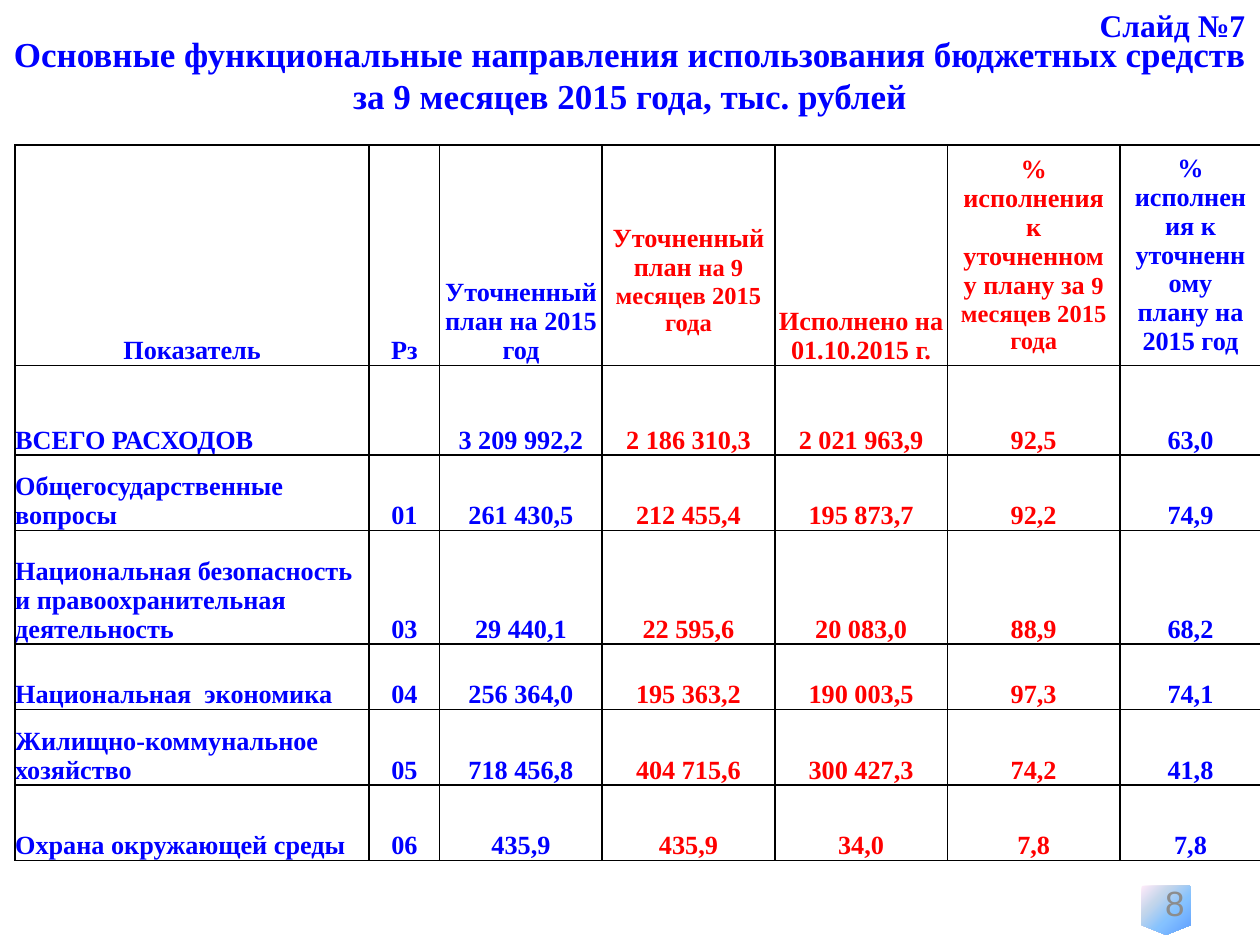
from dataclasses import dataclass

from pptx import Presentation
from pptx.dml.color import RGBColor
from pptx.enum.shapes import MSO_SHAPE
from pptx.enum.text import MSO_ANCHOR, MSO_AUTO_SIZE, PP_ALIGN
from pptx.oxml import parse_xml
from pptx.oxml.ns import nsdecls
from pptx.util import Inches, Pt

LEFT, CENTER, RIGHT = PP_ALIGN.LEFT, PP_ALIGN.CENTER, PP_ALIGN.RIGHT
TOP, MIDDLE, BOTTOM = MSO_ANCHOR.TOP, MSO_ANCHOR.MIDDLE, MSO_ANCHOR.BOTTOM
GROW, FIXED = MSO_AUTO_SIZE.SHAPE_TO_FIT_TEXT, MSO_AUTO_SIZE.NONE
PAGE_MARKER = MSO_SHAPE.FLOWCHART_OFFPAGE_CONNECTOR


@dataclass(frozen=True)
class Theme:
    """Colours, fonts and type sizes of the slide."""

    blue: str = "0000FF"
    red: str = "FF0000"
    gray: str = "8C8C8C"
    border: str = "000000"
    gradient: tuple = ((0, "5E9EFF"), (40, "85C2FF"), (70, "C4D6EB"), (100, "FFEBFA"))
    serif: str = "Times New Roman"
    sans: str = "Arial"
    title: int = 20
    label: int = 18
    body: int = 15
    small: int = 14


COLUMN_WIDTHS = (2.81, 0.56, 1.29, 1.37, 1.37, 1.37, 1.12)
ROW_HEIGHTS = (1.75, 0.71, 0.6, 0.9, 0.52, 0.6, 0.6)
RED_COLUMNS = (3, 4, 5)
PADDED_HEADERS = (5, 6)
PLAN_HEADER = 3
HEADERS = (
    ("Показатель",),
    ("Рз",),
    ("Уточненный план на 2015 год",),
    ("Уточненный план ", "на 9 месяцев 2015 года"),
    ("Исполнено на 01.10.2015 г.",),
    ("% исполнения к уточненному плану за ", "9 месяцев 2015 года"),
    ("% исполнения к уточненному плану на 2015 год",),
)
EXPENSES = (
    ("ВСЕГО РАСХОДОВ", "", "3 209 992,2", "2 186 310,3", "2 021 963,9", "92,5", "63,0"),
    ("Общегосударственные вопросы", "01", "261 430,5", "212 455,4", "195 873,7", "92,2", "74,9"),
    ("Национальная безопасность и правоохранительная деятельность",
     "03", "29 440,1", "22 595,6", "20 083,0", "88,9", "68,2"),
    ("Национальная  экономика", "04", "256 364,0", "195 363,2", "190 003,5", "97,3", "74,1"),
    ("Жилищно-коммунальное хозяйство", "05", "718 456,8", "404 715,6", "300 427,3", "74,2", "41,8"),
    ("Охрана окружающей среды", "06", "435,9", "435,9", "34,0", "7,8", "7,8"),
)


def apply_format(target, values):
    """Set every attribute named in a dict of format values."""
    for name, value in values.items():
        setattr(target, name, value)


class SlideBuilder:
    """Hold the theme and the current slide, and add elements to it."""

    def __init__(self, slide, theme):
        self.slide = slide
        self.theme = theme

    def add_runs(self, paragraph, runs, color, alignment, font=None, bold=True):
        """Fill a paragraph with (text, size) runs."""
        paragraph.alignment = alignment
        for text, size in runs:
            run = paragraph.add_run()
            run.text = text
            apply_format(run.font, {"name": font or self.theme.serif, "size": Pt(size), "bold": bold})
            run.font.color.rgb = RGBColor.from_string(color)

    def add_text(self, box, text, size, color, alignment, anchor=TOP, wrap=True,
                 auto_size=GROW, **style):
        """Add a text box with one paragraph."""
        frame = self.slide.shapes.add_textbox(*map(Inches, box)).text_frame
        apply_format(frame, {"word_wrap": wrap, "auto_size": auto_size, "vertical_anchor": anchor})
        self.add_runs(frame.paragraphs[0], [(text, size)], color, alignment, **style)

    def add_page_marker(self, box):
        """Add the page marker with its circular gradient."""
        shape = self.slide.shapes.add_shape(PAGE_MARKER, *map(Inches, box))
        shape.shadow.inherit = False
        shape.line.fill.background()
        shape.fill.background()
        stops = "".join(
            f'<a:gs pos="{position * 1000}"><a:srgbClr val="{color}"/></a:gs>'
            for position, color in self.theme.gradient
        )
        gradient = parse_xml(
            f'<a:gradFill {nsdecls("a")} rotWithShape="1"><a:gsLst>{stops}</a:gsLst>'
            '<a:path path="circle"><a:fillToRect l="100000" t="100000"/></a:path></a:gradFill>'
        )
        properties = shape.element.spPr
        properties.replace(properties.find("{*}noFill"), gradient)

    def add_borders(self, cell):
        """Draw a one-point line on each side of a cell."""
        properties = cell._tc.get_or_add_tcPr()
        for side in ("lnL", "lnR", "lnT", "lnB"):
            properties.append(parse_xml(
                f'<a:{side} {nsdecls("a")} w="{Pt(1)}"><a:solidFill>'
                f'<a:srgbClr val="{self.theme.border}"/></a:solidFill></a:{side}>'
            ))

    def add_cell(self, cell, texts, color, alignment, values):
        """Format a cell and add its text, any second part in the small size."""
        apply_format(cell, values)
        self.add_borders(cell)
        cell.fill.background()
        runs = zip(texts, (self.theme.body, self.theme.small))
        self.add_runs(cell.text_frame.paragraphs[0], runs, color, alignment)

    def add_expense_table(self, left, top):
        """Add the table of budget expenses."""
        rows = (HEADERS, *([(text,) for text in row] for row in EXPENSES))
        size = (sum(COLUMN_WIDTHS), sum(ROW_HEIGHTS))
        table = self.slide.shapes.add_table(
            len(rows), len(HEADERS), *map(Inches, (left, top, *size))
        ).table
        apply_format(table, {"first_row": False, "horz_banding": False})
        for column, width in zip(table.columns, COLUMN_WIDTHS):
            column.width = Inches(width)
        for row, height in zip(table.rows, ROW_HEIGHTS):
            row.height = Inches(height)
        tight = dict.fromkeys(("margin_left", "margin_right", "margin_top", "margin_bottom"), 0)
        tight["vertical_anchor"] = BOTTOM
        for row_index, row in enumerate(rows):
            for column_index, texts in enumerate(row):
                is_header = row_index == 0
                values = dict(tight)
                if is_header and column_index in PADDED_HEADERS:
                    values = {"vertical_anchor": MIDDLE}
                elif is_header and column_index == PLAN_HEADER:
                    values["margin_bottom"] = Inches(0.23)
                color = self.theme.red if column_index in RED_COLUMNS else self.theme.blue
                alignment = CENTER if is_header or column_index else LEFT
                self.add_cell(table.cell(row_index, column_index), texts, color, alignment, values)


def main():
    """Build and save the budget slide."""
    presentation = Presentation()
    apply_format(presentation, {"slide_width": Inches(10), "slide_height": Inches(7.5)})
    theme = Theme()
    builder = SlideBuilder(presentation.slides.add_slide(presentation.slide_layouts[6]), theme)
    builder.add_page_marker((9.06, 7.03, 0.39, 0.39))
    builder.add_text((7.17, 6.95, 2.33, 0.43), "8", theme.title, theme.gray, RIGHT,
                     anchor=MIDDLE, auto_size=FIXED, font=theme.sans, bold=False)
    builder.add_expense_table(0.12, 1.15)
    builder.add_text(
        (0, 0.21, 10, 0.77),
        "Основные функциональные направления использования бюджетных средств "
        "за 9 месяцев 2015 года, тыс. рублей",
        theme.title, theme.blue, CENTER,
    )
    builder.add_text((8.63, 0, 1.37, 0.4), "Слайд №7", theme.label, theme.blue, LEFT, wrap=False)
    presentation.save("out.pptx")


if __name__ == "__main__":
    main()
